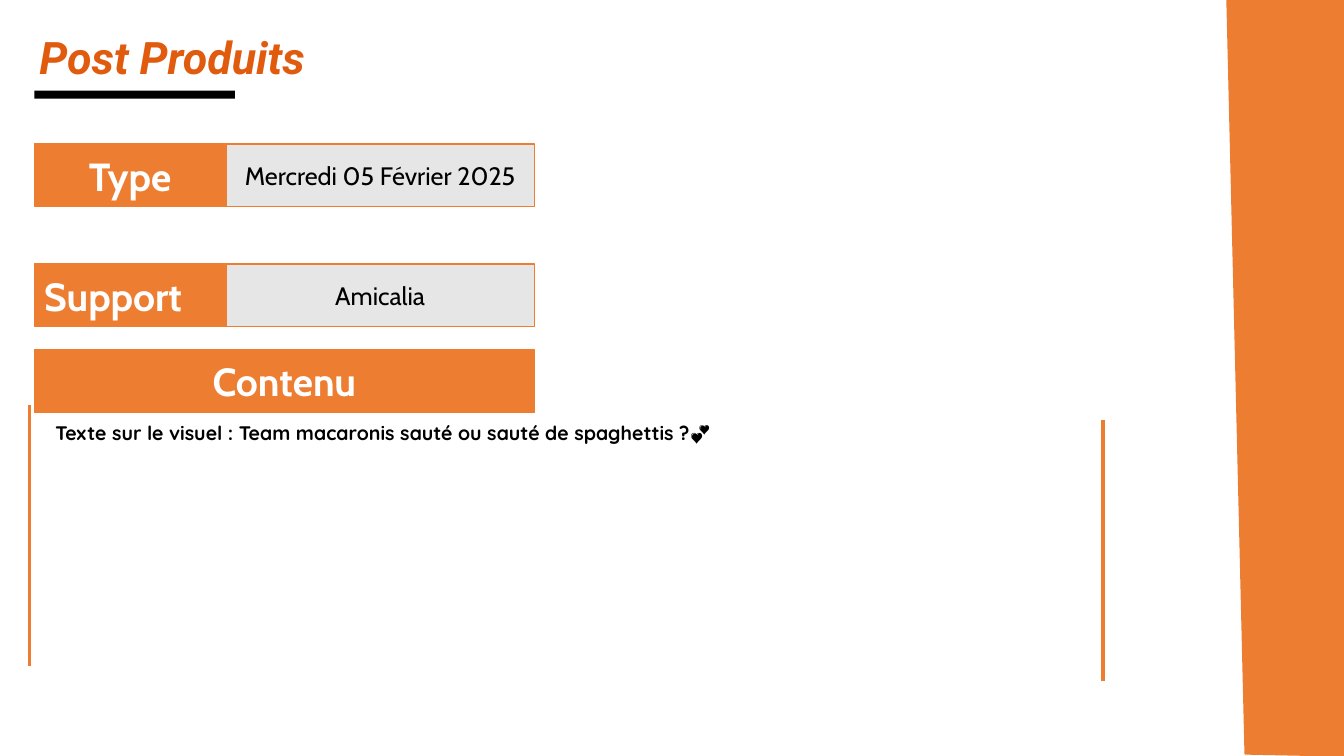
from dataclasses import dataclass

from lxml import etree
from pptx import Presentation
from pptx.dml.color import RGBColor
from pptx.enum import shapes, text
from pptx.oxml import ns
from pptx.util import Inches, Pt

COLORS = {
    "orange": "ED7D31",
    "title": "E15B0F",
    "grey": "E7E6E6",
    "black": "000000",
    "white": "FFFFFF",
}
LEFT, LABEL_W, VALUE_W, ROW_H = 0.34, 1.9, 3.06, 0.62
CENTER, START = text.PP_ALIGN.CENTER, text.PP_ALIGN.LEFT


@dataclass
class Style:
    font: str
    size: int
    color: str
    bold: bool = False
    italic: bool = False


@dataclass
class Cell:
    words: str
    left: float
    top: float
    width: float
    fill: str
    style: Style
    align: text.PP_ALIGN = CENTER


@dataclass
class Rule:
    x: float
    top: float
    bottom: float


LABEL = Style("Cabin", 28, "white", bold=True)
VALUE = Style("Cabin", 18, "black")
TITLE = Style("Roboto", 32, "title", bold=True, italic=True)
BODY = Style("Quicksand", 14, "black", bold=True)
EMOJI = Style("Quicksand", 14, "black")


def rgb(name: str) -> RGBColor:
    return RGBColor.from_string(COLORS[name])


def paint(sp, fill: str, line: str | None = None) -> None:
    sp.shadow.inherit = False
    sp.fill.solid()
    sp.fill.fore_color.rgb = rgb(fill)
    if line is None:
        sp.line.fill.background()
    else:
        sp.line.color.rgb = rgb(line)
        sp.line.width = Pt(1)


def add_run(p, words: str, style: Style) -> None:
    r = p.add_run()
    r.text = words
    r.font.name = style.font
    r.font.size = Pt(style.size)
    r.font.bold = style.bold
    r.font.italic = style.italic
    r.font.color.rgb = rgb(style.color)


def add_rect(slide, left: float, top: float, width: float, height: float):
    return slide.shapes.add_shape(
        shapes.MSO_SHAPE.RECTANGLE,
        Inches(left), Inches(top), Inches(width), Inches(height))


def add_cell(slide, cell: Cell) -> None:
    sp = add_rect(slide, cell.left, cell.top, cell.width, ROW_H)
    paint(sp, cell.fill, "orange")
    tf = sp.text_frame
    tf.vertical_anchor = text.MSO_ANCHOR.MIDDLE
    p = tf.paragraphs[0]
    p.alignment = cell.align
    add_run(p, cell.words, cell.style)


def add_rule(slide, rule: Rule) -> None:
    line = slide.shapes.add_connector(
        shapes.MSO_CONNECTOR.STRAIGHT, Inches(rule.x), Inches(rule.top),
        Inches(rule.x), Inches(rule.bottom))
    line.line.color.rgb = rgb("orange")
    line.line.width = Pt(2.25)
    etree.SubElement(line._element.spPr, ns.qn("a:effectLst"))


def add_text(slide, left: float, top: float, width: float, height: float,
             inset: float, runs: list[tuple[str, Style]]) -> None:
    sp = slide.shapes.add_textbox(
        Inches(left), Inches(top), Inches(width), Inches(height))
    tf = sp.text_frame
    tf.word_wrap = True
    tf.margin_left = Inches(inset)
    for words, style in runs:
        add_run(tf.paragraphs[0], words, style)


def main() -> None:
    prs = Presentation()
    prs.slide_width, prs.slide_height = Inches(13.33), Inches(7.5)
    slide = prs.slides.add_slide(prs.slide_layouts[6])

    # Slanted band on the right
    band = slide.shapes.build_freeform(Inches(12.17), 0)
    band.add_line_segments([
        (Inches(x), Inches(y))
        for x, y in [(13.33, 0), (13.33, 7.5), (12.35, 7.48)]], close=True)
    paint(band.convert_to_shape(), "orange", "orange")

    # Title and its underline
    paint(add_rect(slide, LEFT, 0.9, 1.99, 0.08), "black")
    add_text(slide, 0.19, 0.25, 11.03, 0.52, 0.2, [("Post Produits", TITLE)])

    # Side rules of the content area
    for rule in (Rule(0.29, 4.02, 6.61), Rule(10.94, 4.17, 6.76)):
        add_rule(slide, rule)

    # Label and value rows, then the content header
    value_left = LEFT + LABEL_W
    for cell in (
        Cell("Type", LEFT, 1.43, LABEL_W, "orange", LABEL),
        Cell("Mercredi 05 Février 2025", value_left, 1.43, VALUE_W, "grey", VALUE),
        Cell("Support", LEFT, 2.62, LABEL_W, "orange", LABEL, START),
        Cell("Amicalia", value_left, 2.62, VALUE_W, "grey", VALUE),
        Cell("Contenu", LEFT, 3.47, LABEL_W + VALUE_W, "orange", LABEL),
    ):
        add_cell(slide, cell)

    # Content
    add_text(slide, 0.29, 4.13, 10.82, 0.77, 0.26, [
        ("Texte sur le visuel : Team macaronis sauté ou sauté de spaghettis ?", BODY),
        ("💕", EMOJI),
    ])

    prs.save("out.pptx")


if __name__ == "__main__":
    main()
